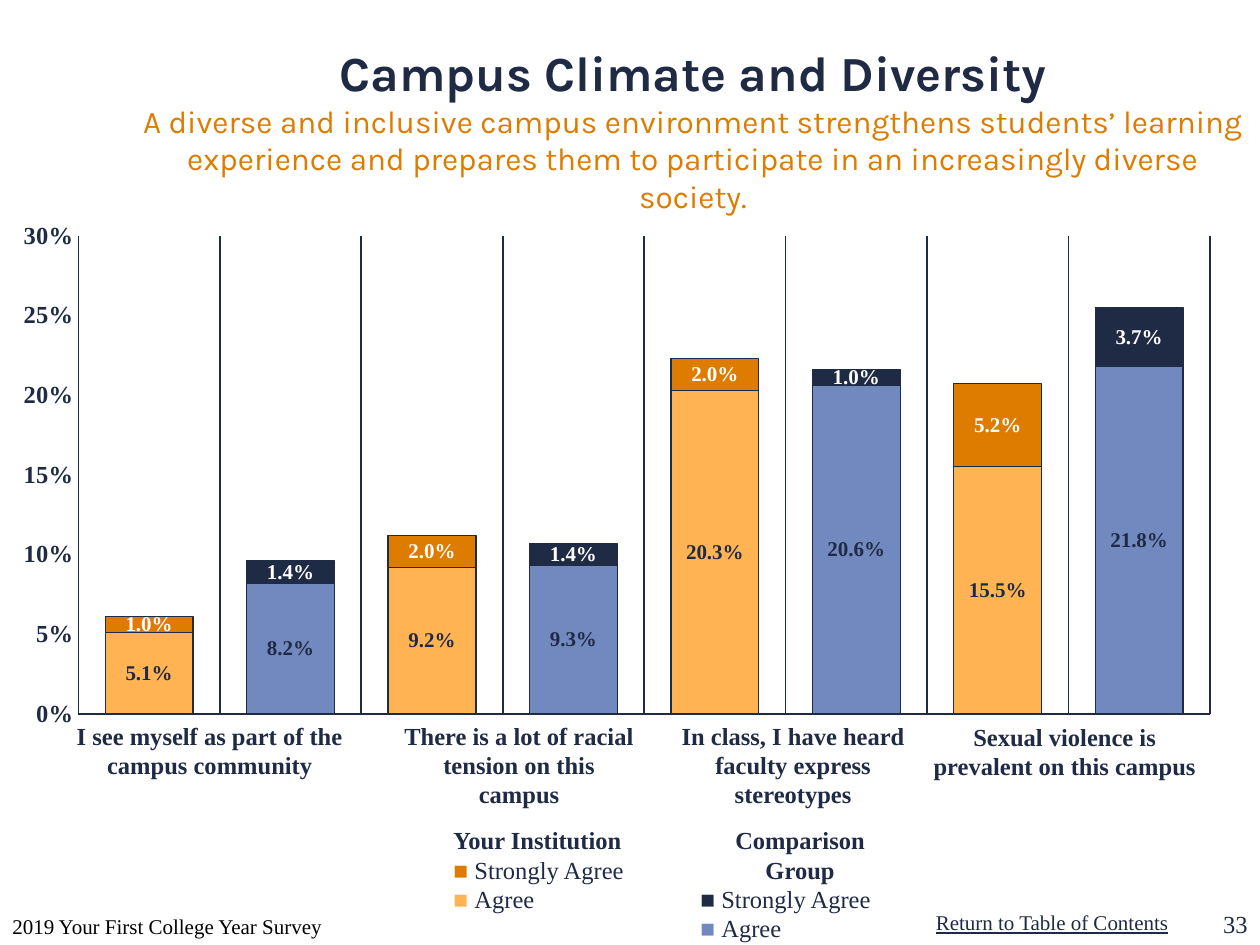
from dataclasses import dataclass

from pptx import Presentation
from pptx.chart.data import CategoryChartData
from pptx.dml.color import RGBColor
from pptx.enum.chart import XL_CHART_TYPE as ChartType
from pptx.enum.chart import XL_LABEL_POSITION as LabelPosition
from pptx.enum.chart import XL_TICK_LABEL_POSITION as TickLabels
from pptx.enum.chart import XL_TICK_MARK as TickMark
from pptx.enum.text import MSO_ANCHOR as Anchor
from pptx.enum.text import PP_ALIGN as Align
from pptx.oxml import parse_xml
from pptx.oxml.ns import nsdecls
from pptx.util import Inches, Pt


@dataclass(frozen=True)
class Theme:
    navy: str = "1F2A44"
    blue: str = "7289BF"
    orange: str = "DE7C00"
    apricot: str = "FFB352"
    white: str = "FFFFFF"
    black: str = "000000"
    heading_font: str = "Karla"
    body_font: str = "Times New Roman"
    title_size: int = 28
    subtitle_size: int = 18
    body_size: int = 14
    small_size: int = 12


def set_line(line, color, width):
    line.color.rgb = RGBColor.from_string(color)
    line.width = Pt(width)


def set_fill(fill, color):
    fill.solid()
    fill.fore_color.rgb = RGBColor.from_string(color)


class SlideBuilder:
    def __init__(self, slide, theme):
        self.slide = slide
        self.theme = theme

    def style(self, font, size, color, bold=False, name=None):
        font.name = name or self.theme.body_font
        font.size = Pt(size)
        font.bold = bold
        font.color.rgb = RGBColor.from_string(color)

    def frame(self, place, anchor=Anchor.TOP, wrap=True):
        box = self.slide.shapes.add_textbox(*map(Inches, place))
        frame = box.text_frame
        frame.word_wrap = wrap
        frame.vertical_anchor = anchor
        return frame

    def text(self, place, text, size, color, bold=False, align=Align.LEFT,
             anchor=Anchor.TOP, wrap=True):
        frame = self.frame(place, anchor, wrap)
        frame.text = text
        para = frame.paragraphs[0]
        para.alignment = align
        self.style(para.runs[0].font, size, color, bold)
        return para

    def title(self, place, heading, subtitle):
        theme = self.theme
        frame = self.frame(place)
        frame.margin_top = Inches(0.09)
        frame.text = f"{heading}\v{subtitle}"
        para = frame.paragraphs[0]
        para.alignment = Align.CENTER
        first, second = para.runs
        self.style(first.font, theme.title_size, theme.navy, True, theme.heading_font)
        self.style(second.font, theme.subtitle_size, theme.orange, False, theme.heading_font)

    def legend(self, place, heading, align, entries):
        theme = self.theme
        frame = self.frame(place)
        frame.text = heading
        para = frame.paragraphs[0]
        para.alignment = align
        self.style(para.runs[0].font, theme.body_size, theme.navy, True)
        for label, color in entries:
            para = frame.add_paragraph()
            for text, tint, bold in (("■ ", color, True), (label, theme.navy, False)):
                span = para.add_run()
                span.text = text
                self.style(span.font, theme.body_size, tint, bold)

    def stacked_chart(self, place, categories, series_rows):
        theme = self.theme
        data = CategoryChartData(number_format="0.0%")
        data.categories = categories
        for name, values, *_ in series_rows:
            data.add_series(name, values)
        chart = self.slide.shapes.add_chart(
            ChartType.COLUMN_STACKED, *map(Inches, place), data).chart
        chart.has_legend = False
        chart.has_title = False
        self.style(chart.font, theme.subtitle_size, theme.white)

        plot = chart.plots[0]
        plot.gap_width = 61
        plot.overlap = 100
        plot.vary_by_categories = False
        for series, (_, _, own, peer, label_color) in zip(plot.series, series_rows):
            self.series(series, len(categories), own, peer, label_color)
        self.axes(chart)
        self.plot_area(chart, x=0.054, y=0.027, w=0.946, h=0.933)

    def series(self, series, count, own, peer, label_color):
        theme = self.theme
        series.invert_if_negative = False
        set_fill(series.format.fill, own)
        set_line(series.format.line, theme.navy, 0.75)
        for index in range(1, count, 2):
            point = series.points[index].format
            set_fill(point.fill, peer)
            set_line(point.line, theme.navy, 0.75)
        labels = series.data_labels
        labels.show_value = True
        labels.number_format = "0.0%"
        labels.number_format_is_linked = False
        labels.position = LabelPosition.CENTER
        self.style(labels.font, theme.small_size, label_color, True)

    def axes(self, chart):
        theme = self.theme
        category, value = chart.category_axis, chart.value_axis
        for axis, width in ((category, 0.75), (value, 1)):
            axis.major_tick_mark = axis.minor_tick_mark = TickMark.NONE
            set_line(axis.format.line, theme.navy, width)
        category.tick_label_position = TickLabels.NONE
        category.has_major_gridlines = True
        set_line(category.major_gridlines.format.line, theme.navy, 1)
        value.has_major_gridlines = False
        value.minimum_scale, value.maximum_scale, value.major_unit = 0, 0.3, 0.05
        value.tick_labels.number_format = "0%"
        value.tick_labels.number_format_is_linked = False
        self.style(value.tick_labels.font, theme.body_size, theme.navy, True)

    def plot_area(self, chart, **layout):
        sizes = "".join(f'<c:{key} val="{size}"/>' for key, size in layout.items())
        area = chart.plots[0]._element.getparent()
        for old in area.findall("{*}layout"):
            area.remove(old)
        area.insert(0, parse_xml(
            f'<c:layout {nsdecls("c")}><c:manualLayout><c:layoutTarget val="inner"/>'
            f'<c:xMode val="edge"/><c:yMode val="edge"/>{sizes}'
            '</c:manualLayout></c:layout>'))


def main():
    theme = Theme()
    deck = Presentation()
    deck.slide_width, deck.slide_height = Inches(10), Inches(7.5)
    page = SlideBuilder(deck.slides.add_slide(deck.slide_layouts[6]), theme)

    contents = page.text((7.33, 7.17, 2.07, 0.3), "Return to Table of Contents",
                         theme.small_size, theme.navy, wrap=False)
    contents.runs[0].font.underline = True
    page.title((1, 0.25, 9, 1.25), "Campus Climate and Diversity",
               "A diverse and inclusive campus environment strengthens students’ "
               "learning experience and prepares them to participate in an "
               "increasingly diverse society.")
    page.text((0, 7, 3.17, 0.5), "2019 Your First College Year Survey",
              theme.small_size, theme.black, anchor=Anchor.BOTTOM)
    page.text((9.5, 7, 0.5, 0.5), "33", theme.body_size, theme.navy,
              align=Align.RIGHT, anchor=Anchor.BOTTOM)

    page.stacked_chart((0.11, 1.76, 9.5, 4.07), [str(n) for n in range(1, 9)], [
        ("Series 1", (0.051, 0.082, 0.092, 0.093, 0.203, 0.206, 0.155, 0.218),
         theme.apricot, theme.blue, theme.navy),
        ("Series 2", (0.01, 0.014, 0.02, 0.014, 0.02, 0.01, 0.052, 0.037),
         theme.orange, theme.navy, theme.white),
    ])

    statements = [
        ((0.5, 5.67, 2.33, 0.57), "I see myself as part of the campus community"),
        ((3.08, 5.67, 2.08, 0.81), "There is a lot of racial tension on this campus"),
        ((5.17, 5.67, 2.25, 0.81), "In class, I have heard faculty express stereotypes"),
        ((7.29, 5.68, 2.32, 0.57), "Sexual violence is prevalent on this campus"),
    ]
    for place, statement in statements:
        page.text(place, statement, theme.body_size, theme.navy, True, Align.CENTER)

    legends = [
        ((3.5, 6.5, 2.05, 1.04), "Your Institution", Align.LEFT, theme.orange, theme.apricot),
        ((5.46, 6.5, 1.78, 1.04), "Comparison Group", Align.CENTER, theme.navy, theme.blue),
    ]
    for place, heading, align, strong, mild in legends:
        page.legend(place, heading, align, [("Strongly Agree", strong), ("Agree", mild)])

    deck.save("out.pptx")


if __name__ == "__main__":
    main()
